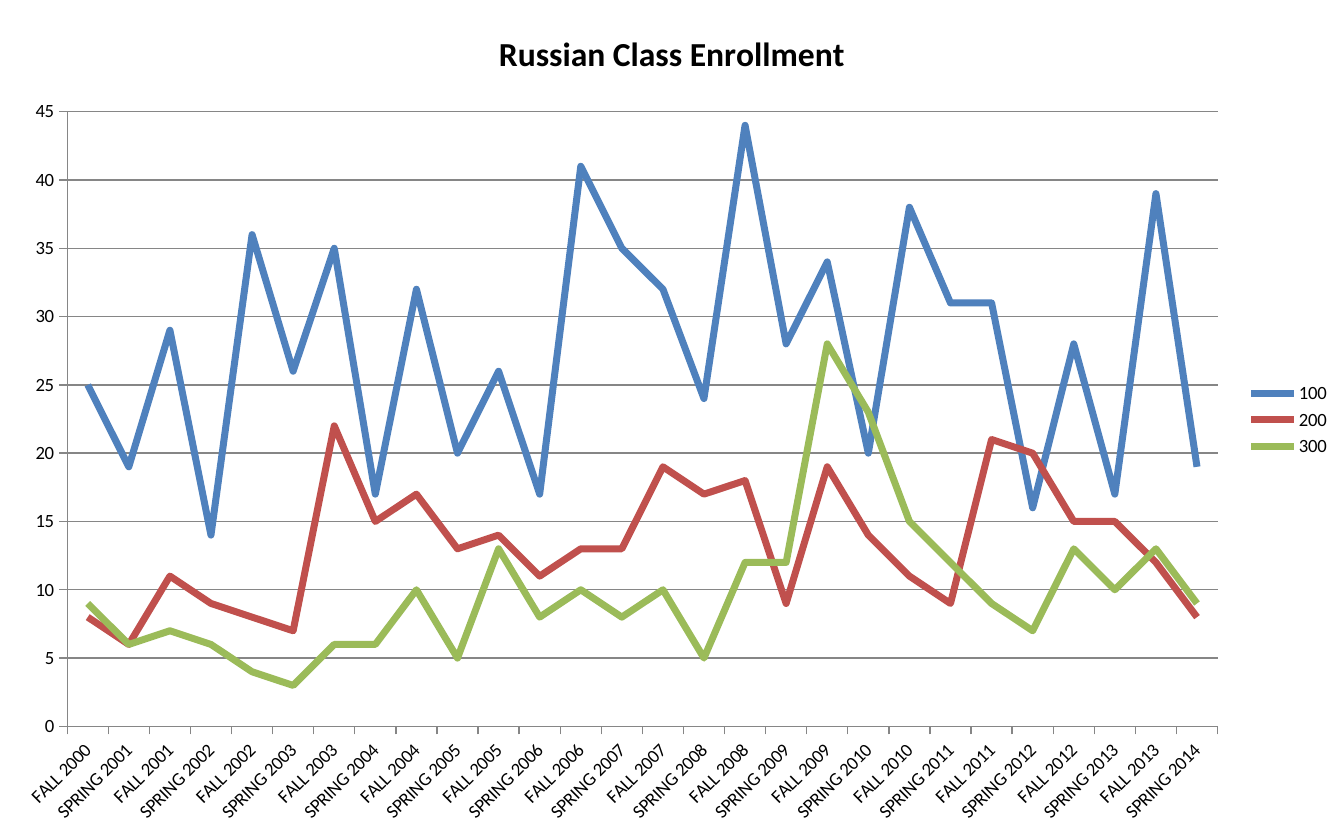
from dataclasses import dataclass

from lxml import etree
from pptx import Presentation
from pptx.chart.data import CategoryChartData
from pptx.dml.color import RGBColor
from pptx.enum.chart import XL_CHART_TYPE, XL_LEGEND_POSITION, XL_MARKER_STYLE, XL_TICK_MARK
from pptx.oxml.ns import qn
from pptx.util import Pt

LINE_CHART = XL_CHART_TYPE.LINE
LEGEND_RIGHT = XL_LEGEND_POSITION.RIGHT
NO_MARKER = XL_MARKER_STYLE.NONE
TICK_OUTSIDE, TICK_NONE = XL_TICK_MARK.OUTSIDE, XL_TICK_MARK.NONE


@dataclass(frozen=True)
class Theme:
    font: str = "Calibri"
    text: str = "000000"
    grid: str = "868686"
    background: str = "FFFFFF"
    series: tuple = ("4F81BD", "C0504D", "9BBB59")
    title_size: float = 18
    label_size: float = 10
    series_width: float = 3.75
    grid_width: float = 0.75


THEME = Theme()
SLIDE_WIDTH, SLIDE_HEIGHT = Pt(720), Pt(450)
TITLE = "Russian Class Enrollment"
# Terms run from fall 2000 to spring 2014
TERMS = [term for year in range(2000, 2014)
         for term in (f"FALL {year}", f"SPRING {year + 1}")]
ENROLLMENT = {
    "100": (25, 19, 29, 14, 36, 26, 35, 17, 32, 20, 26, 17, 41, 35,
            32, 24, 44, 28, 34, 20, 38, 31, 31, 16, 28, 17, 39, 19),
    "200": (8, 6, 11, 9, 8, 7, 22, 15, 17, 13, 14, 11, 13, 13,
            19, 17, 18, 9, 19, 14, 11, 9, 21, 20, 15, 15, 12, 8),
    "300": (9, 6, 7, 6, 4, 3, 6, 6, 10, 5, 13, 8, 10, 8,
            10, 5, 12, 12, 28, 23, 15, 12, 9, 7, 13, 10, 13, 9),
}
PLOT_LAYOUT = {"x": 0.05, "y": 0.133, "w": 0.856, "h": 0.732}
LABEL_ROTATION = -45


def set_attributes(target, values):
    for name, value in values.items():
        setattr(target, name, value)


def format_font(font, size, bold=False):
    set_attributes(font, {"name": THEME.font, "size": Pt(size), "bold": bold})
    font.color.rgb = RGBColor.from_string(THEME.text)


def format_line(line, color, width):
    line.color.rgb = RGBColor.from_string(color)
    line.width = Pt(width)


def place_plot(chart, layout_values):
    """Fix the inner plot area as fractions of the chart."""
    plot_area = chart._chartSpace.chart.plotArea
    for old_layout in plot_area.findall(qn("c:layout")):
        plot_area.remove(old_layout)
    layout = etree.Element(qn("c:layout"))
    manual = etree.SubElement(layout, qn("c:manualLayout"))
    settings = {"layoutTarget": "inner", "xMode": "edge", "yMode": "edge", **layout_values}
    for name, value in settings.items():
        etree.SubElement(manual, qn(f"c:{name}")).set("val", str(value))
    plot_area.insert(0, layout)


def format_axes(chart):
    category_axis, value_axis = chart.category_axis, chart.value_axis
    for axis in (category_axis, value_axis):
        set_attributes(axis, {"major_tick_mark": TICK_OUTSIDE, "minor_tick_mark": TICK_NONE})
        format_line(axis.format.line, THEME.grid, THEME.grid_width)
        format_font(axis.tick_labels.font, THEME.label_size)
    set_attributes(value_axis, {"minimum_scale": 0, "maximum_scale": 45,
                                "major_unit": 5, "has_major_gridlines": True})
    format_line(value_axis.major_gridlines.format.line, THEME.grid, THEME.grid_width)
    body = category_axis._element.find(qn("c:txPr")).find(qn("a:bodyPr"))
    body.set("rot", str(LABEL_ROTATION * 60000))


def add_enrollment_chart(slide, left, top, width, height):
    data = CategoryChartData(number_format="General")
    data.categories = TERMS
    for name, values in ENROLLMENT.items():
        data.add_series(name, values)
    chart = slide.shapes.add_chart(LINE_CHART, left, top, width, height, data).chart
    format_font(chart.font, THEME.label_size)

    # Title
    chart.has_title = True
    title_frame = chart.chart_title.text_frame
    title_frame.text = TITLE
    format_font(title_frame.paragraphs[0].runs[0].font, THEME.title_size, bold=True)
    chart.chart_title.include_in_layout = False

    # Legend
    chart.has_legend = True
    set_attributes(chart.legend, {"position": LEGEND_RIGHT, "include_in_layout": False})
    format_font(chart.legend.font, THEME.label_size)

    # Axes and plot
    format_axes(chart)
    place_plot(chart, PLOT_LAYOUT)
    plot = chart.plots[0]
    plot.vary_by_categories = False
    for series, color in zip(plot.series, THEME.series):
        series.smooth = False
        series.marker.style = NO_MARKER
        format_line(series.format.line, color, THEME.series_width)


def main():
    presentation = Presentation()
    set_attributes(presentation, {"slide_width": SLIDE_WIDTH, "slide_height": SLIDE_HEIGHT})
    slide = presentation.slides.add_slide(presentation.slide_layouts[6])
    slide.background.fill.solid()
    slide.background.fill.fore_color.rgb = RGBColor.from_string(THEME.background)
    add_enrollment_chart(slide, Pt(0), Pt(0), SLIDE_WIDTH, SLIDE_HEIGHT)
    presentation.save("out.pptx")


if __name__ == "__main__":
    main()
